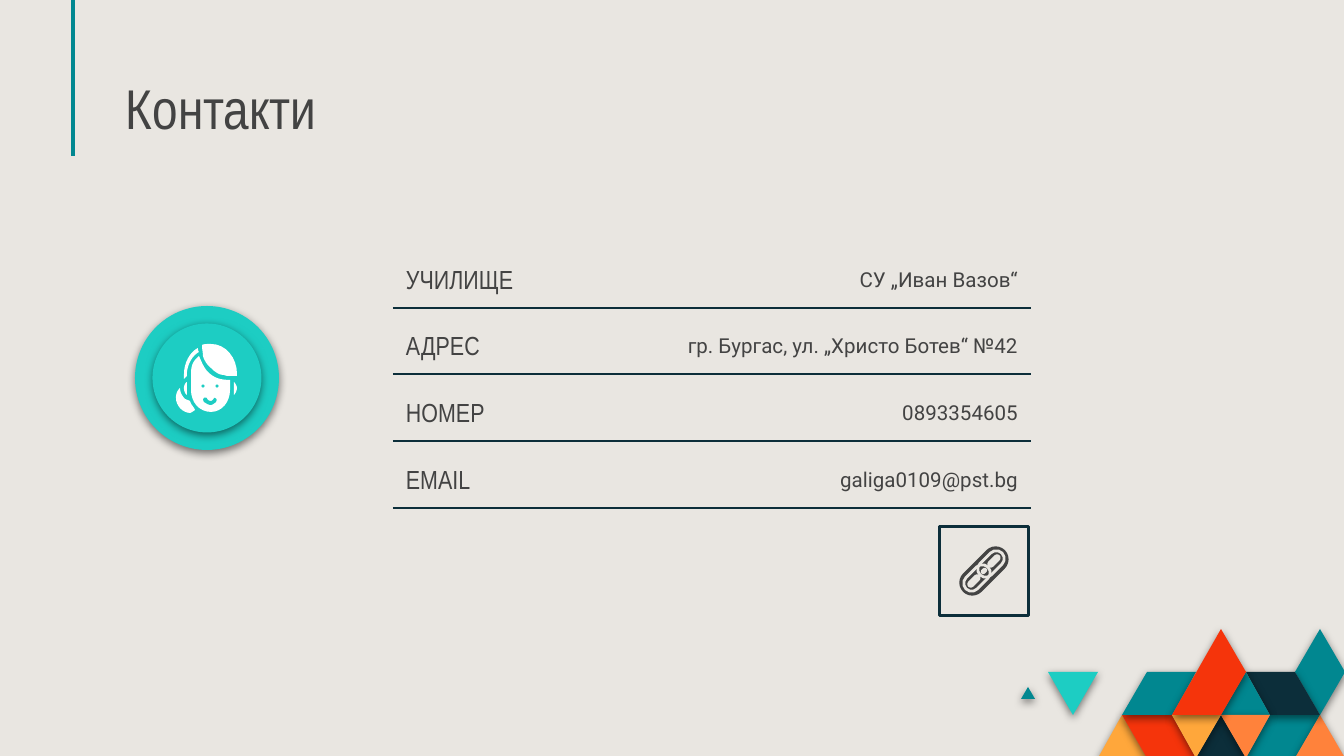
from dataclasses import dataclass

from lxml.etree import SubElement
from pptx import Presentation
from pptx.dml.color import RGBColor
from pptx.enum.shapes import MSO_CONNECTOR, MSO_SHAPE
from pptx.enum.text import MSO_ANCHOR as Anchor, PP_ALIGN as Align
from pptx.oxml.ns import qn
from pptx.util import Pt

SCALE = 914400 / 134.4  # EMU per px


@dataclass(frozen=True)
class Theme:
    background: str = "E9E6E1"
    text: str = "434343"
    navy: str = "0C2E3A"
    teal: str = "018790"
    turquoise: str = "1DCDC3"
    red: str = "F5340B"
    orange: str = "FF823B"
    amber: str = "FFA73B"
    white: str = "FFFFFF"
    heading_font: str = "Arial Narrow"
    body_font: str = "Roboto"
    title_size: int = 30
    label_size: int = 14
    value_size: int = 11


THEME = Theme()

TITLE = "Контакти"
CONTACTS = [
    ("УЧИЛИЩЕ", "СУ „Иван Вазов“"),
    ("АДРЕС", "гр. Бургас, ул. „Христо Ботев“ №42"),
    ("НОМЕР", "0893354605"),
    ("EMAIL", "galiga0109@pst.bg"),
]

# Corner mosaic: colour and corners as (column, row) of a triangular grid
MOSAIC = [
    (THEME.amber, [(0, 3), (1, 2), (2, 3)]),
    (THEME.red, [(1, 2), (3, 2), (4, 3), (2, 3)]),
    (THEME.teal, [(6, 3), (7, 2), (9, 2), (8, 3)]),
    (THEME.orange, [(8, 3), (9, 2), (10, 3)]),
    (THEME.navy, [(4, 3), (5, 2), (6, 3)]),
    (THEME.teal, [(1, 2), (2, 1), (4, 1), (3, 2)]),
    (THEME.turquoise, [(-2, 1), (0, 1), (-1, 2)]),
    (THEME.teal, [(8, 1), (9, 0), (10, 1), (9, 2)]),
    (THEME.navy, [(6, 1), (8, 1), (9, 2), (7, 2)]),
    (THEME.teal, [(5, 2), (6, 1), (7, 2)]),
    (THEME.orange, [(5, 2), (7, 2), (6, 3)]),
    (THEME.amber, [(3, 2), (5, 2), (4, 3)]),
    (THEME.red, [(3, 2), (5, 0), (6, 1), (5, 2)]),
]
SMALL_TRIANGLE = [(1021, 699), (1028, 687), (1035, 699)]

# Outlines: a start point, then line ends (2 numbers) or cubic curves (6 numbers)
AVATAR = {
    "left ear": [(187, 382), (185, 383, 184, 386, 184, 388),
                 (184, 391, 185, 394, 187, 395)],
    "bun": [(180, 388), (177, 391, 176, 394, 176, 398), (176, 406, 183, 413, 190, 413),
            (191, 413, 194, 411, 195, 410), (194, 407, 191, 405, 190, 401),
            (185, 399), (182, 396, 180, 392, 180, 388)],
    "face": [(199, 356), (196, 359), (192, 363, 191, 368, 191, 374), (191, 390),
             (191, 402, 199, 412, 211, 412), (222, 412, 230, 402, 230, 390),
             (230, 380), (220, 380, 214, 378, 208, 372), (204, 368, 202, 363, 199, 356)],
    "right ear": [(234, 382), (234, 395), (235, 394, 237, 391, 237, 388),
                  (237, 386, 235, 383, 234, 382)],
    "fringe": [(211, 344), (207, 344, 204, 344, 202, 345), (202, 349, 203, 353, 203, 356),
               (204, 360, 207, 365, 211, 368), (215, 372, 219, 375, 224, 375),
               (226, 376, 228, 376, 230, 376), (237, 376), (237, 374),
               (237, 358, 226, 344, 211, 344)],
    "back hair": [(198, 348), (190, 352, 184, 363, 184, 374), (184, 379), (187, 376),
                  (187, 372), (188, 364, 192, 356, 199, 352),
                  (198, 351, 198, 349, 198, 348)],
}
MOUTH = [(215, 398), (217, 399, 217, 400, 216, 402), (215, 403, 212, 405, 211, 405),
         (208, 405, 206, 403, 204, 402), (203, 400, 203, 399, 204, 398),
         (205, 397, 206, 398, 207, 398), (207, 399, 208, 401, 211, 401),
         (212, 401, 214, 399, 214, 398)]
EYES = [(203, 386), (217, 386)]


def px(*lengths):
    return [round(length * SCALE) for length in lengths]


def rgb(color):
    return RGBColor.from_string(color)


def paint(shape, fill=None, line=None, width=1.5, shadow=False):
    if fill:
        shape.fill.solid()
        shape.fill.fore_color.rgb = rgb(fill)
    else:
        shape.fill.background()
    if line:
        shape.line.color.rgb = rgb(line)
        shape.line.width = Pt(width)
    else:
        shape.line.fill.background()
    shape.shadow.inherit = False
    if shadow:
        effects = shape._element.spPr.find(qn("a:effectLst"))
        outer = SubElement(effects, qn("a:outerShdw"), blurRad="57150", dist="19050",
                           dir="5400000", algn="bl", rotWithShape="0")
        color = SubElement(outer, qn("a:srgbClr"), val="000000")
        SubElement(color, qn("a:alpha"), val="50000")


def add_centred(slide, kind, centre, size, **style):
    (x, y), (width, height) = centre, size
    shape = slide.shapes.add_shape(
        kind, *px(x - width / 2, y - height / 2, width, height))
    paint(shape, **style)
    return shape


def add_capsule(slide, centre, size, **style):
    shape = add_centred(slide, MSO_SHAPE.ROUNDED_RECTANGLE, centre, size, **style)
    shape.adjustments[0] = 0.5
    shape.rotation = -45


def flatten(outline, steps=8):
    """Turn an outline of lines and cubic curves into plain points."""
    points = [outline[0]]
    for segment in outline[1:]:
        if len(segment) == 2:
            points.append(segment)
            continue
        controls = [points[-1], segment[:2], segment[2:4], segment[4:]]
        for step in range(1, steps + 1):
            t = step / steps
            weights = ((1 - t) ** 3, 3 * t * (1 - t) ** 2, 3 * t * t * (1 - t), t ** 3)
            points.append(tuple(sum(weight * control[axis] for weight, control
                                    in zip(weights, controls)) for axis in (0, 1)))
    return points


def add_outline(slide, outline, **style):
    points = [px(*point) for point in flatten(outline)]
    builder = slide.shapes.build_freeform(*points[0], scale=1.0)
    builder.add_line_segments(points[1:], close=True)
    paint(builder.convert_to_shape(), **style)


def add_line(slide, start, end, color, width):
    line = slide.shapes.add_connector(MSO_CONNECTOR.STRAIGHT, *px(*start, *end))
    line.line.color.rgb = rgb(color)
    line.line.width = Pt(width)
    SubElement(line._element.spPr, qn("a:effectLst"))


def add_text(slide, box, text, font, size, anchor=Anchor.TOP, align=Align.LEFT, spacing=1.0):
    frame = slide.shapes.add_textbox(*px(*box)).text_frame
    frame.word_wrap = True
    frame.vertical_anchor = anchor
    frame.margin_left, frame.margin_top, frame.margin_right, frame.margin_bottom = px(*[13] * 4)
    frame.text = text
    paragraph = frame.paragraphs[0]
    paragraph.alignment = align
    paragraph.line_spacing = spacing
    run_font = paragraph.runs[0].font
    run_font.name, run_font.size = font, Pt(size)
    run_font.color.rgb = rgb(THEME.text)


def add_mosaic(slide):
    for color, corners in MOSAIC:
        points = [(1098 + column * 247 // 10, 629 + row * 43) for column, row in corners]
        add_outline(slide, points, fill=color, shadow=True)
    add_outline(slide, SMALL_TRIANGLE, fill=THEME.teal, shadow=True)


def add_contacts(slide):
    left, right, first_top = 393, 1031, 250
    for index, (label, value) in enumerate(CONTACTS):
        top = first_top + index * 200 // 3
        add_line(slide, (left, top + 58), (right, top + 58), THEME.navy, 1.5)
        add_text(slide, (left, top, 289, 54), label, THEME.heading_font, THEME.label_size)
        add_text(slide, (right - 528, top, 528, 54), value, THEME.body_font,
                 THEME.value_size, Anchor.BOTTOM, Align.RIGHT)


def add_avatar(slide):
    for diameter in (144, 109):
        add_centred(slide, MSO_SHAPE.OVAL, (207, 378), (diameter, diameter),
                    fill=THEME.turquoise, shadow=True)
    for outline in AVATAR.values():
        add_outline(slide, outline, fill=THEME.white)
    add_outline(slide, MOUTH, fill=THEME.turquoise)
    for eye in EYES:
        add_centred(slide, MSO_SHAPE.OVAL, eye, (3, 3), fill=THEME.turquoise)


def add_link_button(slide):
    x, y = 984, 571
    add_centred(slide, MSO_SHAPE.RECTANGLE, (x, y), (89, 89), line=THEME.navy)
    add_capsule(slide, (x, y), (59, 26), fill=THEME.text)
    for side in (-1, 1):
        add_capsule(slide, (x + 7 * side, y - 7 * side), (31, 16), line=THEME.background)
        add_capsule(slide, (x + 10 * side, y - 10 * side), (16, 7), fill=THEME.background)
    add_capsule(slide, (x, y), (7, 5), fill=THEME.background)


def main():
    presentation = Presentation()
    presentation.slide_width, presentation.slide_height = px(1344, 756)
    slide = presentation.slides.add_slide(presentation.slide_layouts[6])
    slide.background.fill.solid()
    slide.background.fill.fore_color.rgb = rgb(THEME.background)

    add_line(slide, (73, 0), (73, 156), THEME.teal, 2.25)
    add_mosaic(slide)
    add_text(slide, (113, 69, 559, 84), TITLE, THEME.heading_font, THEME.title_size,
             Anchor.BOTTOM, spacing=0.8)
    add_contacts(slide)
    add_avatar(slide)
    add_link_button(slide)
    presentation.save("out.pptx")


if __name__ == "__main__":
    main()
